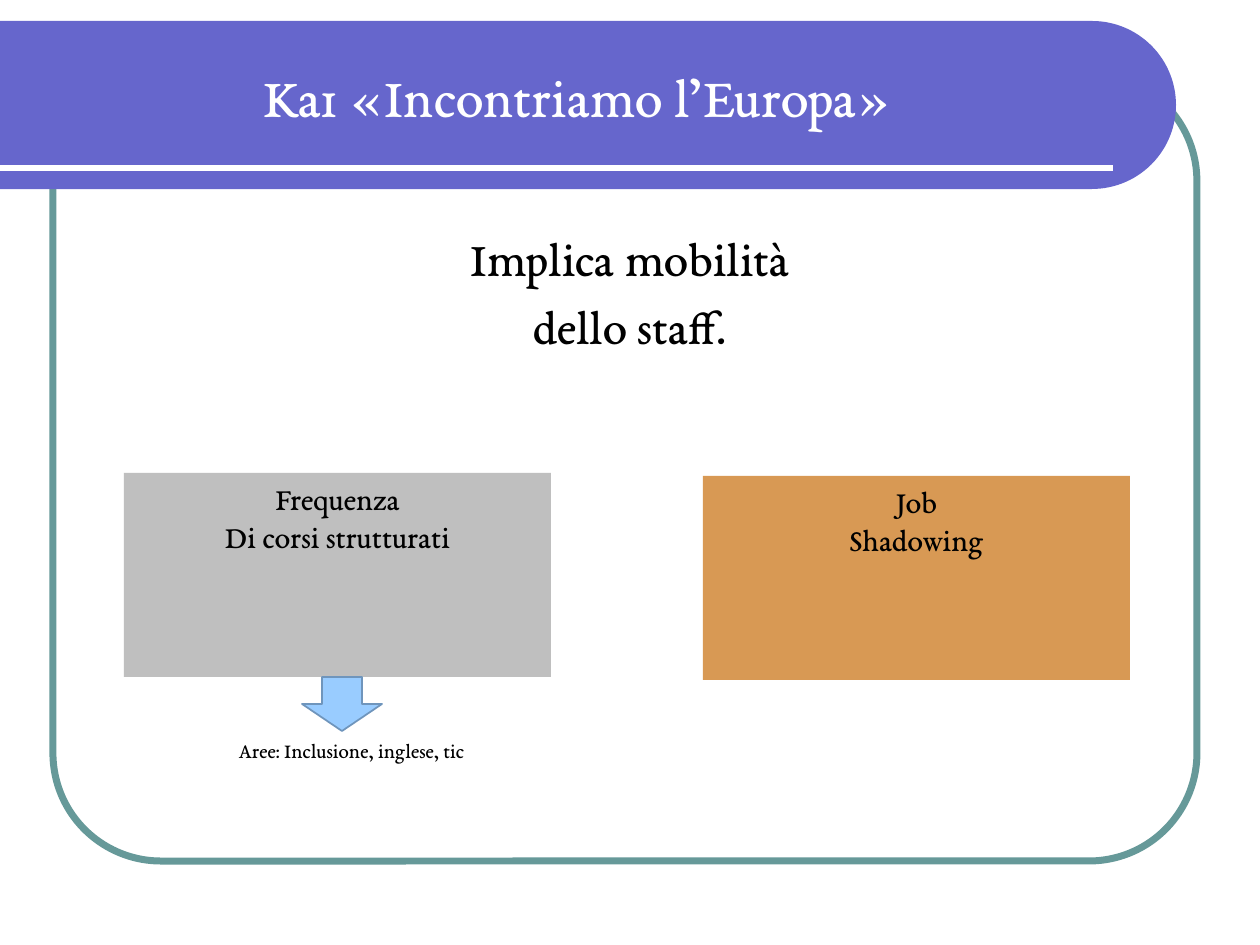
"""Build the Ka1 «Incontriamo l’Europa» slide on staff mobility."""
import math
from dataclasses import dataclass

from lxml import etree
from pptx import Presentation
from pptx import util as u
from pptx.dml.color import RGBColor
from pptx.enum import shapes, text
from pptx.oxml.ns import qn

FONT = "EB Garamond"
WHITE = RGBColor(0xFF, 0xFF, 0xFF)
BLACK = RGBColor(0x00, 0x00, 0x00)
TEAL = RGBColor(0x66, 0x99, 0x99)
VIOLET = RGBColor(0x66, 0x66, 0xCC)
GREY = RGBColor(0xBF, 0xBF, 0xBF)
ORANGE = RGBColor(0xD8, 0x99, 0x54)
SKY = RGBColor(0x99, 0xCC, 0xFF)
STEEL = RGBColor(0x6F, 0x95, 0xBC)
SHAPE = shapes.MSO_SHAPE


def px(length: float) -> int:
    """Turn pixels into EMU."""
    return round(length * u.Inches(1) / 126)


@dataclass(frozen=True)
class Area:
    """A rectangle in pixels."""

    left: int
    top: int
    width: int
    height: int

    def emu(self) -> tuple[int, ...]:
        """Return left, top, width and height in EMU."""
        return tuple(px(n) for n in (self.left, self.top, self.width, self.height))


@dataclass(frozen=True)
class Activity:
    """A coloured box naming one kind of mobility."""

    area: Area
    fill: RGBColor
    lines: tuple[str, ...]


ACTIVITIES = (
    Activity(Area(124, 473, 427, 204), GREY, ("Frequenza", "Di corsi strutturati")),
    Activity(Area(703, 476, 427, 204), ORANGE, ("Job", "Shadowing")),
)


def write(box, lines: tuple[str, ...], size: int, color: RGBColor = BLACK,
          anchor=text.MSO_ANCHOR.TOP, gap: float = 0) -> None:
    """Fill a shape with centred paragraphs."""
    frame = box.text_frame
    frame.word_wrap = True
    frame.auto_size = text.MSO_AUTO_SIZE.NONE
    frame.vertical_anchor = anchor
    for index, line in enumerate(lines):
        para = frame.add_paragraph() if index else frame.paragraphs[0]
        para.text = line
        para.alignment = text.PP_ALIGN.CENTER
        para.space_before = u.Pt(gap if index else 0)
        para.font.name = FONT
        para.font.size = u.Pt(size)
        para.font.color.rgb = color


def paint(shape, fill: RGBColor | None, line: RGBColor | None = None, width: int = 1) -> None:
    """Set fill and outline and drop the shadow."""
    shape.shadow.inherit = False
    if fill is None:
        shape.fill.background()
    else:
        shape.fill.solid()
        shape.fill.fore_color.rgb = fill
    if line is None:
        shape.line.fill.background()
    else:
        shape.line.color.rgb = line
        shape.line.width = u.Pt(width)


def add_banner(page, top: int, right: int, height: int) -> None:
    """Draw the title band with its half-round right end."""
    radius = height / 2
    angles = [math.radians(degree) for degree in range(-90, 91, 3)]
    arc = [(px(right - radius + radius * math.cos(a)), px(top + radius + radius * math.sin(a)))
           for a in angles]
    builder = page.shapes.build_freeform(0, px(top))
    builder.add_line_segments(arc + [(0, px(top + height))], close=True)
    paint(builder.convert_to_shape(), VIOLET)


def add_rule(page, right: int, y: int) -> None:
    """Draw the white rule inside the banner."""
    rule = page.shapes.add_connector(shapes.MSO_CONNECTOR.STRAIGHT, 0, px(y), px(right), px(y))
    rule.line.color.rgb = WHITE
    rule.line.width = u.Pt(3)
    etree.SubElement(rule.element.spPr, qn("a:effectLst"))


def add_title(page, area: Area, words: str) -> None:
    """Place the title placeholder in front of the banner."""
    title = page.shapes.title
    title.left, title.top, title.width, title.height = area.emu()
    write(title, (words,), 32, WHITE, text.MSO_ANCHOR.MIDDLE)
    title.element.getparent().append(title.element)


def add_text(page, area: Area, lines: tuple[str, ...], size: int, gap: float = 0) -> None:
    """Add a text box."""
    write(page.shapes.add_textbox(*area.emu()), lines, size, gap=gap)


def add_activity(page, activity: Activity) -> None:
    """Add one activity box."""
    box = page.shapes.add_shape(SHAPE.RECTANGLE, *activity.area.emu())
    paint(box, activity.fill)
    write(box, activity.lines, 18)


def main() -> None:
    """Build and save the deck."""
    deck = Presentation()
    deck.slide_width, deck.slide_height = u.Inches(10), u.Inches(7.5)
    page = deck.slides.add_slide(deck.slide_layouts.get_by_name("Title Only"))

    border = page.shapes.add_shape(SHAPE.ROUNDED_RECTANGLE, *Area(53, 73, 1144, 788).emu())
    border.adjustments[0] = 0.137
    paint(border, None, TEAL, 4)
    add_banner(page, top=21, right=1176, height=168)
    add_rule(page, right=1113, y=168)
    add_title(page, Area(26, 32, 1105, 126), "Ka1 «Incontriamo l’Europa»")

    add_text(page, Area(84, 221, 1092, 609), ("Implica mobilità", "dello staff."), 28, gap=5.6)
    for activity in ACTIVITIES:
        add_activity(page, activity)
    add_text(page, Area(124, 731, 455, 64), ("Aree: Inclusione, inglese, tic",), 12)
    arrow = page.shapes.add_shape(SHAPE.DOWN_ARROW, *Area(302, 677, 80, 54).emu())
    paint(arrow, SKY, STEEL)

    deck.save("out.pptx")


if __name__ == "__main__":
    main()
